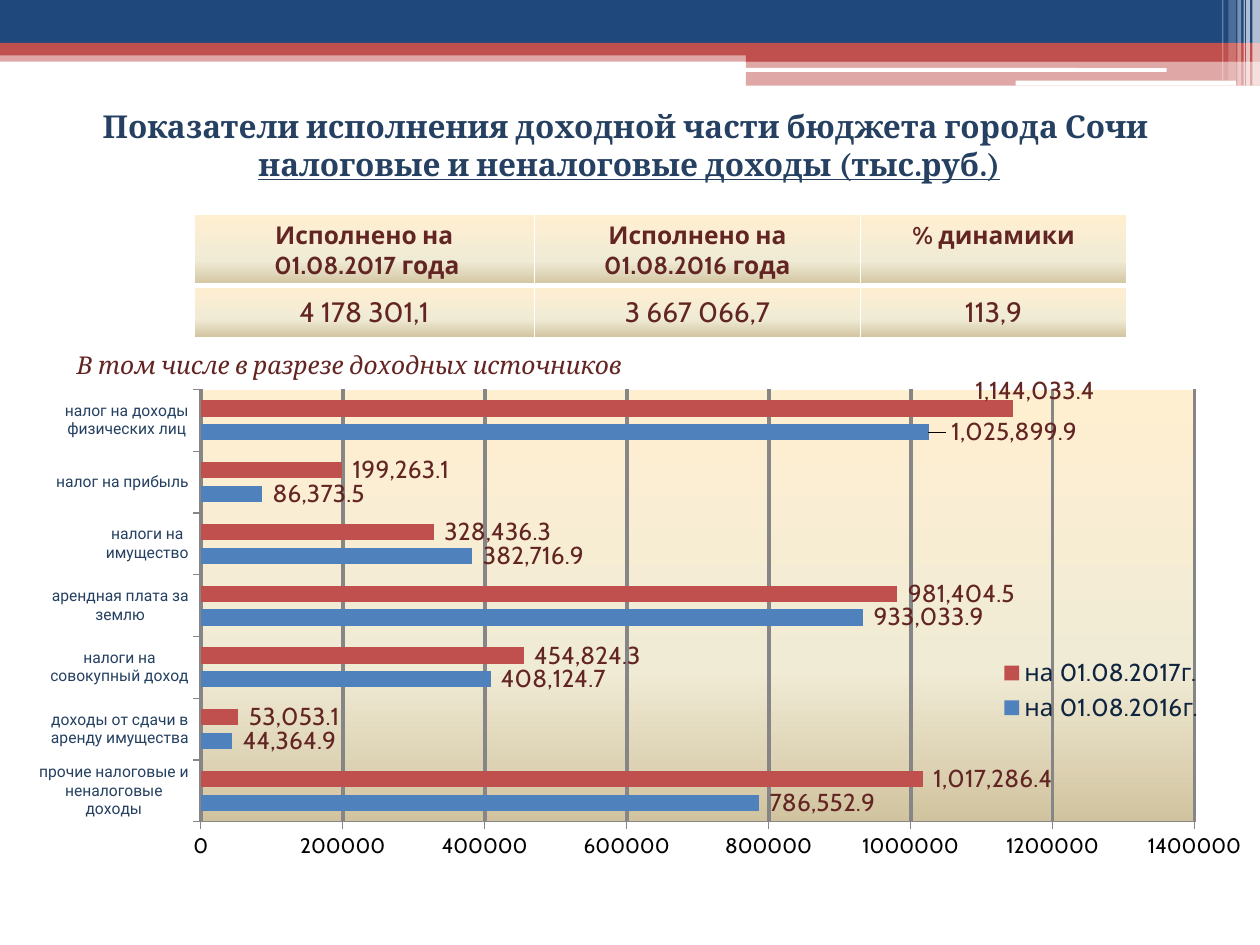
"""Build a slide on city budget revenue: a summary table and a bar chart by source."""
from copy import deepcopy
from lxml.etree import SubElement
from pptx import Presentation
from pptx.chart.data import CategoryChartData
from pptx.dml.color import RGBColor
from pptx.enum.chart import XL_CHART_TYPE, XL_LABEL_POSITION, XL_LEGEND_POSITION, XL_TICK_MARK
from pptx.enum.shapes import MSO_SHAPE
from pptx.enum.text import MSO_ANCHOR, PP_ALIGN
from pptx.oxml import parse_xml
from pptx.oxml.ns import nsdecls, qn
from pptx.util import Pt

PX = 9144
NAVY, RED, BLUE, WHITE = "1F497D", "C0504D", "4F81BD", "FFFFFF"
INK, MAROON = "254061", "632523"


def color(value):
    return RGBColor.from_string(value)


def write(frame, text, size=14, font="Cabin", ink=MAROON, align=PP_ALIGN.CENTER,
          bold=False, italic=False, underline=False):
    frame.word_wrap = True
    paragraph = frame.paragraphs[0] if not frame.text else frame.add_paragraph()
    paragraph.alignment = align
    run = paragraph.add_run()
    run.text = text
    run.font.size, run.font.name = Pt(size), font
    run.font.bold, run.font.italic, run.font.underline = bold, italic, underline
    run.font.color.rgb = color(ink)


deck = Presentation()
deck.slide_width, deck.slide_height = 1000 * PX, 750 * PX
slide = deck.slides.add_slide(deck.slide_layouts[6])

sand = parse_xml(
    f'<a:gradFill {nsdecls("a")} rotWithShape="1"><a:gsLst>'
    + "".join(f'<a:gs pos="{stop}000"><a:srgbClr val="{tone}"/></a:gs>'
              for stop, tone in ((0, "FFEFD1"), (65, "F0EBD5"), (100, "D1C39F")))
    + '</a:gsLst><a:lin ang="5400000" scaled="0"/></a:gradFill>')

BAR, PILL = MSO_SHAPE.RECTANGLE, MSO_SHAPE.ROUNDED_RECTANGLE
header_bands = [
    (BAR, 0, 40, 1000, 9, RED, 50),
    (BAR, 0, 0, 1000, 34, NAVY, 100),
    (BAR, 0, 34, 1000, 10, RED, 100),
    (BAR, 592, 39, 408, 10, RED, 100),
    (BAR, 592, 48, 408, 20, RED, 50),
    (PILL, 591, 54, 335, 3, WHITE, 100),
    (PILL, 806, 64, 175, 4, WHITE, 100),
    (BAR, 994, 0, 6, 68, WHITE, 65),
    (BAR, 989, 0, 3, 68, WHITE, 65),
    (BAR, 987, 0, 1, 68, WHITE, 60),
    (BAR, 982, 0, 3, 68, WHITE, 40),
    (BAR, 975, 0, 6, 64, WHITE, 20),
    (BAR, 970, 0, 1, 64, WHITE, 30),
]
for kind, left, top, width, height, tone, opacity in header_bands:
    band = slide.shapes.add_shape(kind, left * PX, top * PX, width * PX, height * PX)
    band.shadow.inherit = False
    band.line.fill.background()
    band.fill.solid()
    band.fill.fore_color.rgb = color(tone)
    if opacity < 100:
        tint = band.fill._xPr.find(".//" + qn("a:srgbClr"))
        SubElement(tint, qn("a:alpha"), val=str(opacity * 1000))

sources = [
    ("прочие налоговые и неналоговые доходы", 786552.9, 1017286.4),
    ("доходы от сдачи в аренду имущества", 44364.9, 53053.1),
    ("налоги на совокупный доход", 408124.7, 454824.3),
    ("арендная плата за землю", 933033.9, 981404.5),
    ("налоги на имущество", 382716.9, 328436.3),
    ("налог на прибыль", 86373.5, 199263.1),
    ("налог на доходы физических лиц", 1025899.9, 1144033.4),
]
names, revenue_2016, revenue_2017 = zip(*sources)
revenue = CategoryChartData()
revenue.categories = names
revenue.add_series("на 01.08.2016г.", revenue_2016)
revenue.add_series("на 01.08.2017г.", revenue_2017)
chart = slide.shapes.add_chart(XL_CHART_TYPE.BAR_CLUSTERED, 31 * PX, 296 * PX,
                               957 * PX, 454 * PX, revenue).chart
chart.has_title = False
chart.font.size, chart.font.name = Pt(18), "Cambria"
chart.has_legend = True
chart.legend.position = XL_LEGEND_POSITION.RIGHT
chart.legend.include_in_layout = False

amounts, source_axis = chart.value_axis, chart.category_axis
amounts.minimum_scale, amounts.maximum_scale, amounts.major_unit = 0, 1400000, 200000
amounts.tick_labels.number_format = "General"
amounts.tick_labels.number_format_is_linked = False
amounts.has_major_gridlines = True
gridline = amounts.major_gridlines.format.line
gridline.width = Pt(2.25)
gridline.color.rgb = color("868686")
for axis in (amounts, source_axis):
    axis.major_tick_mark = XL_TICK_MARK.OUTSIDE
    axis.format.line.color.rgb = color("868686")

bars = chart.plots[0]
bars.gap_width, bars.overlap, bars.vary_by_categories = 134, -45, False
label_fonts = [
    (amounts.tick_labels.font, 12, "000000", "Cabin"),
    (source_axis.tick_labels.font, 9, INK, "Roboto"),
    (chart.legend.font, 14, "0F243E", "Cabin"),
]
top_label_shifts = []
for series, tone, shift in zip(bars.series, (BLUE, RED), ((0.01, 0), (-0.04, -0.03))):
    series.format.fill.solid()
    series.format.fill.fore_color.rgb = color(tone)
    series.invert_if_negative = False
    labels = series.data_labels
    labels.show_value = True
    labels.number_format = "_-* #,##0.0_р_._-"
    labels.number_format_is_linked = False
    labels.position = XL_LABEL_POSITION.OUTSIDE_END
    top_label = series.points[6].data_label
    top_label.position = XL_LABEL_POSITION.OUTSIDE_END
    label_fonts += [(part.font, 14, MAROON, "Cabin") for part in (labels, top_label)]
    moved = labels._element.find(qn("c:dLbl")).find(qn("c:idx"))
    top_label_shifts.append((moved, dict(zip("xy", shift))))
for font, size, ink, face in label_fonts:
    font.size, font.name, font.bold = Pt(size), face, False
    font.color.rgb = color(ink)

plot_area = chart._chartSpace.find(".//" + qn("c:plotArea"))
for old in plot_area.findall(qn("c:layout")):
    plot_area.remove(old)
for old in chart.legend._element.findall(qn("c:layout")):
    chart.legend._element.remove(old)
legend_place = dict(xMode="edge", yMode="edge", x=0.79, y=0.49, w=0.18, h=0.13)
plot_place = dict(layoutTarget="inner", xMode="edge", yMode="edge",
                  x=0.127, y=0.029, w=0.831, h=0.756)
legend_start = chart.legend._element.find(qn("c:legendPos"))
for anchor, place in top_label_shifts + [(legend_start, legend_place), (None, plot_place)]:
    layout = parse_xml(f'<c:layout {nsdecls("c")}><c:manualLayout>'
                       + "".join(f'<c:{key} val="{value}"/>' for key, value in place.items())
                       + "</c:manualLayout></c:layout>")
    if anchor is None:
        plot_area.insert(0, layout)
    else:
        anchor.addnext(layout)
SubElement(plot_area, qn("c:spPr")).append(deepcopy(sand))

title = slide.shapes.add_textbox(31 * PX, 80 * PX, 937 * PX, 71 * PX).text_frame
heading = dict(size=18, font="Cambria", ink=INK, bold=True)
write(title, "Показатели исполнения доходной части бюджета города Сочи ", **heading)
write(title, "налоговые и неналоговые доходы (тыс.руб.)", underline=True, **heading)

summary = slide.shapes.add_table(2, 3, 154 * PX, 170 * PX, 740 * PX, 97 * PX).table
for column, width in zip(summary.columns, (270, 259, 211)):
    column.width = width * PX
for row, height in zip(summary.rows, (56, 41)):
    row.height = height * PX
summary_rows = [
    (["Исполнено на", " 01.08.2017 года"], ["Исполнено на 01.08.2016 года"], ["% динамики"]),
    (["4 178 301,1"], ["3 667 066,7"], ["113,9"]),
]
for r, row in enumerate(summary_rows):
    for c, lines in enumerate(row):
        cell = summary.cell(r, c)
        for line in lines:
            write(cell.text_frame, line, size=(14, 16)[r], bold=r == 0)
        if r == 1:
            cell.vertical_anchor = MSO_ANCHOR.MIDDLE
            cell.margin_left = cell.margin_right = cell.margin_top = PX
            cell.margin_bottom = 0
        borders = cell._tc.get_or_add_tcPr()
        for side in "LRTB":
            weight = 3 if side == "B" and r == 0 else 1
            edge = SubElement(borders, qn(f"a:ln{side}"), w=str(Pt(weight)))
            SubElement(SubElement(edge, qn("a:solidFill")), qn("a:srgbClr"), val=WHITE)
        borders.append(deepcopy(sand))

subtitle = slide.shapes.add_textbox(51 * PX, 273 * PX, 472 * PX, 34 * PX).text_frame
write(subtitle, "В том числе в разрезе доходных источников", font="Cambria",
      align=PP_ALIGN.LEFT, italic=True)

deck.save("out.pptx")
